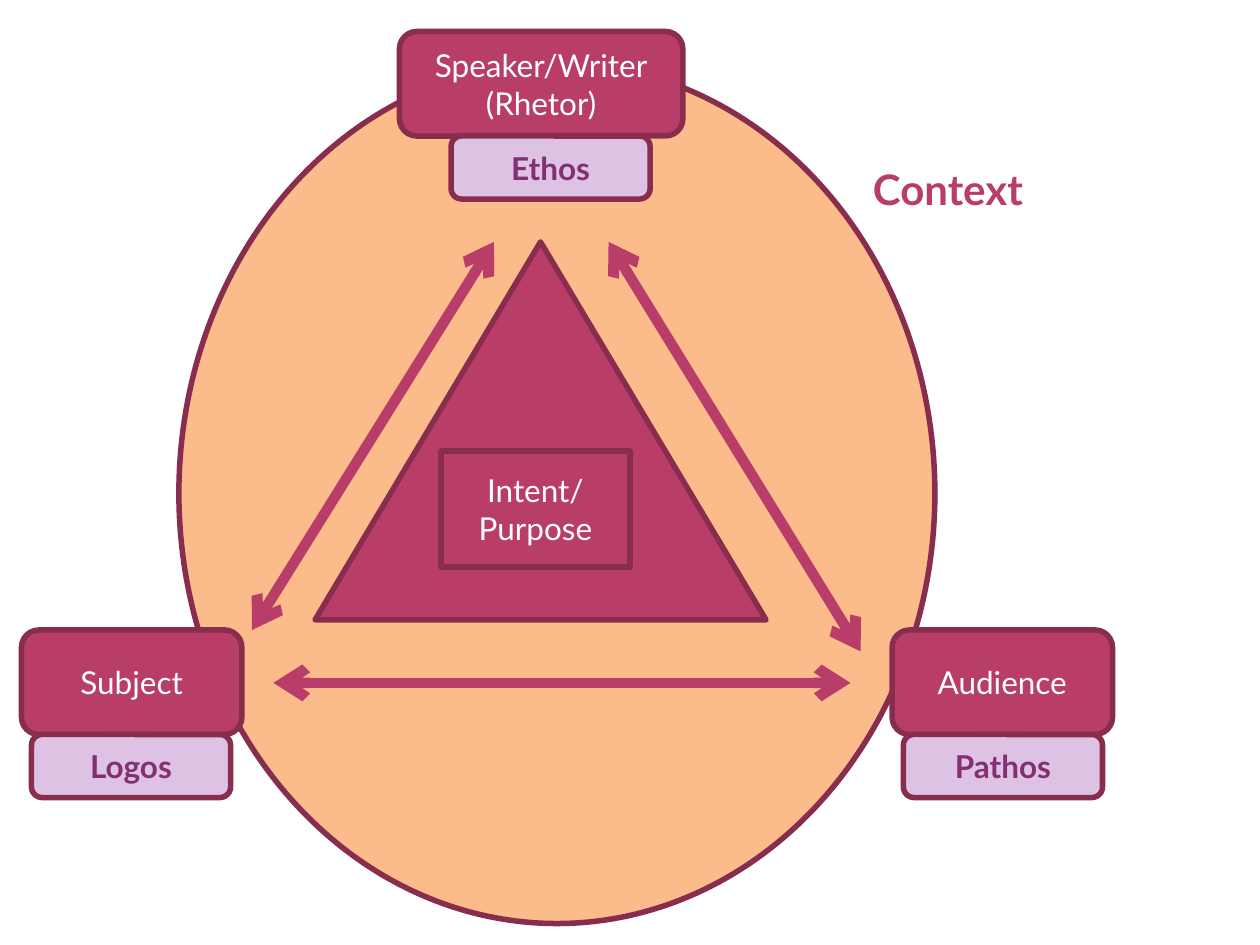
"""Build a slide of the rhetorical triangle inside its context."""
from lxml.etree import SubElement
from pptx import Presentation
from pptx.dml.color import RGBColor
from pptx.enum.shapes import MSO_CONNECTOR, MSO_SHAPE
from pptx.enum.text import MSO_ANCHOR, PP_ALIGN
from pptx.oxml.ns import qn
from pptx.util import Inches, Pt

ROSE = RGBColor(0xB8, 0x3D, 0x68)
WINE = RGBColor(0x88, 0x2D, 0x4D)
PEACH = RGBColor(0xFC, 0xBB, 0x8B)
LILAC = RGBColor(0xDE, 0xC2, 0xE4)
PURPLE = RGBColor(0x85, 0x2F, 0x73)
WHITE = RGBColor(0xFF, 0xFF, 0xFF)

ROLE_HEIGHT = 0.83
APPEAL_SIZE = (1.58, 0.5)
CORNERS = [
    ("Audience", 7.08, 5, 1.75, "Pathos", 7.17),
    ("Subject", 0.17, 5, 1.75, "Logos", 0.25),
    ("Speaker/Writer\n(Rhetor)", 3.17, 0.25, 2.25, "Ethos", 3.58),
]
ARROWS = [
    (3.92, 1.92, 2, 5),
    (6.75, 5.42, 2.17, 5.42),
    (4.83, 1.92, 6.83, 5.17),
]


class Diagram:
    """Hold the style and the current slide."""

    label_format = {"name": "Lato", "size": Pt(18), "bold": False}
    frame_format = {"word_wrap": True, "vertical_anchor": MSO_ANCHOR.MIDDLE}
    outline_width = Pt(3.15)
    arrow_width = Pt(6)

    def __init__(self, slide):
        self.slide = slide

    def label(self, shape, text, alignment, color, **changes):
        shape.text_frame.text = text
        for paragraph in shape.text_frame.paragraphs:
            paragraph.alignment = alignment
            paragraph.font.color.rgb = color
            for name, value in {**self.label_format, **changes}.items():
                setattr(paragraph.font, name, value)

    def shape(self, kind, box, fill, text="", color=WHITE, bold=False):
        shape = self.slide.shapes.add_shape(kind, *map(Inches, box))
        shape.shadow.inherit = False
        shape.fill.solid()
        shape.fill.fore_color.rgb = fill
        shape.line.color.rgb = WINE
        shape.line.width = self.outline_width
        if text:
            for name, value in self.frame_format.items():
                setattr(shape.text_frame, name, value)
            self.label(shape, text, PP_ALIGN.CENTER, color, bold=bold)

    def heading(self, box, text):
        shape = self.slide.shapes.add_textbox(*map(Inches, box))
        shape.text_frame.word_wrap = True
        self.label(shape, text, PP_ALIGN.LEFT, ROSE, size=Pt(24), bold=True)

    def arrow(self, ends):
        connector = self.slide.shapes.add_connector(
            MSO_CONNECTOR.STRAIGHT, *map(Inches, ends))
        connector.line.color.rgb = ROSE
        connector.line.width = self.arrow_width
        properties = connector._element.spPr
        line = properties.find(qn("a:ln"))
        for tag in ("a:headEnd", "a:tailEnd"):
            SubElement(line, qn(tag), type="arrow")
        SubElement(properties, qn("a:effectLst"))


def main():
    presentation = Presentation()
    presentation.slide_width = Inches(10)
    presentation.slide_height = Inches(7.5)
    diagram = Diagram(presentation.slides.add_slide(presentation.slide_layouts[6]))

    diagram.shape(MSO_SHAPE.OVAL, (1.42, 0.5, 6, 6.83), PEACH)
    diagram.heading((6.83, 1.25, 2, 0.5), "Context")
    for ends in ARROWS:
        diagram.arrow(ends)
    for role, left, top, width, appeal, appeal_left in CORNERS:
        diagram.shape(MSO_SHAPE.ROUNDED_RECTANGLE,
                      (left, top, width, ROLE_HEIGHT), ROSE, role)
        diagram.shape(MSO_SHAPE.ROUNDED_RECTANGLE,
                      (appeal_left, top + ROLE_HEIGHT, *APPEAL_SIZE),
                      LILAC, appeal, PURPLE, bold=True)
    diagram.shape(MSO_SHAPE.ISOSCELES_TRIANGLE, (2.5, 1.92, 3.58, 3), ROSE)
    diagram.shape(MSO_SHAPE.RECTANGLE, (3.5, 3.58, 1.5, 0.92), ROSE, "Intent/ Purpose")

    presentation.save("out.pptx")


if __name__ == "__main__":
    main()
